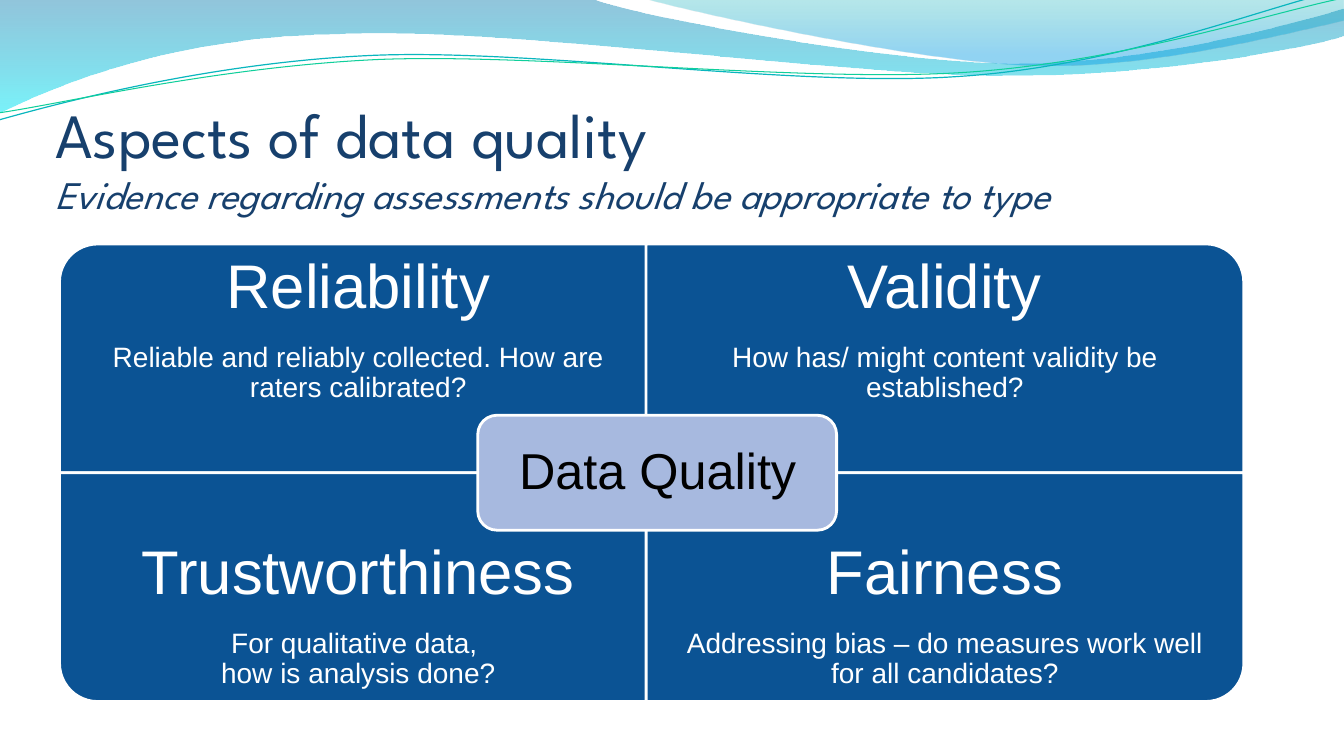
import math
from lxml import etree
from pptx import Presentation, util as u
from pptx.dml.color import RGBColor
from pptx.enum import shapes, text
from pptx.oxml.ns import qn

NAVY = RGBColor(0x17, 0x40, 0x6D)
BLUE = RGBColor(0x0B, 0x53, 0x94)
LILAC = RGBColor(0xA7, 0xB9, 0xDF)
WHITE = RGBColor(0xFF, 0xFF, 0xFF)
BLACK = RGBColor(0, 0, 0)
STEEL = RGBColor(0x00, 0x79, 0xAD)
CYAN = RGBColor(0x00, 0xE9, 0xF7)
TEAL = RGBColor(0x00, 0xAB, 0xB4)
SKY = RGBColor(0x00, 0x99, 0xE4)
AQUA = RGBColor(0x09, 0xB6, 0xBE)
GREEN = RGBColor(0x10, 0xCF, 0x9B)

prs = Presentation()
prs.slide_width, prs.slide_height = u.Inches(40 / 3), u.Inches(7.5)
s = prs.slides.add_slide(prs.slide_layouts[6])


def add_curve(frame, turn, start, segments, close):
    x, y, w, h = frame
    fb = s.shapes.build_freeform(0, 0, scale=1.0)
    fb.add_line_segments([(u.Inches(w), u.Inches(h))], close=close)
    sp = fb.convert_to_shape()
    sp.left, sp.top, sp.width, sp.height = [u.Inches(v) for v in frame]
    sp.rotation = turn
    sp.shadow.inherit = False
    outline = next(sp.element.iter(qn("a:path")))
    for node in list(outline):
        outline.remove(node)
    cos, sin = math.cos(math.radians(-turn)), math.sin(math.radians(-turn))
    for seg in [start] + segments:
        tag = "a:moveTo" if seg is start else "a:lnTo" if len(seg) == 2 else "a:cubicBezTo"
        node = etree.SubElement(outline, qn(tag))
        for px, py in zip(seg[::2], seg[1::2]):
            dx, dy = px - x - w / 2, py - y - h / 2
            pt = etree.SubElement(node, qn("a:pt"))
            pt.set("x", str(int(u.Inches(w / 2 + dx * cos - dy * sin))))
            pt.set("y", str(int(u.Inches(h / 2 + dx * sin + dy * cos))))
    if close:
        etree.SubElement(outline, qn("a:close"))
    return sp


def add_text(box, paras, font, color, inset, anchor, align, spacing):
    sp = s.shapes.add_textbox(*[u.Inches(v) for v in box])
    tf = sp.text_frame
    tf.word_wrap = True
    tf.vertical_anchor = anchor
    tf.margin_left = tf.margin_right = tf.margin_top = tf.margin_bottom = u.Inches(inset)
    for i, (runs, before) in enumerate(paras):
        p = tf.add_paragraph() if i else tf.paragraphs[0]
        p.alignment, p.line_spacing = align, spacing
        p.space_before = u.Pt(before)
        for j, (words, size, italic) in enumerate(runs):
            if j:
                p.add_line_break()
            r = p.add_run()
            r.text = words
            r.font.name, r.font.size = font, u.Pt(size)
            r.font.italic, r.font.color.rgb = italic, color


waves = [
    ((-0.02, -0.01, 13.36, 1.14), (0, 0),
     [(5.87, -0.01), (6.34, 0.17, 8.84, 0.63, 10.11, 0.63),
      (11.37, 0.63, 12.77, 0.26, 13.33, 0.09), (13.34, 0.36),
      (13.11, 0.44, 11.59, 0.76, 9.94, 0.75), (8.29, 0.75, 5.09, 0.28, 3.43, 0.34),
      (1.72, 0.36, 0.61, 0.83, -0.02, 1.13), (0, 0)],
     [(0, STEEL, 43), (1, CYAN, 53)]),
    ((6.38, -0.01, 6.94, 0.7), (6.38, -0.01),
     [(6.79, 0.11, 9.09, 0.62, 10.25, 0.65), (11.4, 0.69, 12.82, 0.32, 13.33, 0.21),
      (13.33, 0), (6.38, -0.01)],
     [(0, TEAL, 28), (0.8, SKY, 43)]),
]
for frame, start, segments, stops in waves:
    sp = add_curve(frame, 0, start, segments, True)
    sp.line.fill.background()
    sp.fill.gradient()
    sp.fill.gradient_angle = 270
    for stop, (pos, color, alpha) in zip(sp.fill.gradient_stops, stops):
        stop.position, stop.color.rgb = pos, color
    for clr, (pos, color, alpha) in zip(sp.element.spPr.iter(qn("a:srgbClr")), stops):
        etree.SubElement(clr, qn("a:alpha")).set("val", str(alpha * 1000))

strands = [
    ((-0.03, 0.22, 13.36, 0.71), (-0.01, 1.19),
     [(0.63, 1.01, 2.1, 0.62, 3.69, 0.55), (5.27, 0.48, 7.89, 0.87, 9.49, 0.76),
      (11.1, 0.66, 12.51, 0.08, 13.3, -0.1)], AQUA, 0.85),
    ((-0.02, 0.3, 13.38, 0.58), (-0.01, 1.12),
     [(0.62, 1.03, 2.18, 0.66, 3.77, 0.59), (5.37, 0.53, 7.96, 0.82, 9.55, 0.72),
      (11.14, 0.62, 12.55, 0.14, 13.33, -0.02)], GREEN, 0.75),
]
for frame, start, segments, color, width in strands:
    sp = add_curve(frame, 357.3, start, segments, False)
    sp.fill.background()
    sp.line.color.rgb, sp.line.width = color, u.Pt(width)

add_text((0.55, 0.98, 12.11, 1.18),
         [([("Aspects of data quality", 45, False),
            ("Evidence regarding assessments should be appropriate to type", 27.9, True)], 0)],
         "League Spartan", NAVY, 0, text.MSO_ANCHOR.BOTTOM, text.PP_ALIGN.LEFT, 1.0)

LEFT, TOP, COL, ROW = 0.59, 2.42, 5.82, 2.27
CELL_W, TEXT_H = 5.93, 0.75 * ROW
quadrants = [
    (0, 0, 270, "Reliability", ["Reliable and reliably collected. How are raters calibrated?"]),
    (1, 0, 0, "Validity", ["How has/ might content validity be established?"]),
    (0, 1, 180, "Trustworthiness", ["For qualitative data, ", "how is analysis done?"]),
    (1, 1, 90, "Fairness", ["Addressing bias – do measures work well for all candidates?"]),
]
centred = (text.MSO_ANCHOR.MIDDLE, text.PP_ALIGN.CENTER, 0.9)
kinds = shapes.MSO_SHAPE
for col, row, turn, heading, lines in quadrants:
    x, y = LEFT + col * COL, TOP + row * ROW
    w, h = (ROW, CELL_W) if turn % 180 else (CELL_W, ROW)
    sp = s.shapes.add_shape(kinds.ROUND_1_RECTANGLE, u.Inches(x + (CELL_W - w) / 2),
                            u.Inches(y + (ROW - h) / 2), u.Inches(w), u.Inches(h))
    sp.rotation = turn
    sp.shadow.inherit = False
    sp.fill.solid()
    sp.fill.fore_color.rgb = BLUE
    sp.line.color.rgb, sp.line.width = WHITE, u.Pt(2)
    add_text((x, y + row * (ROW - TEXT_H), CELL_W, TEXT_H),
             [([(heading, 44, False)], 0), ([(line, 20, False) for line in lines], 15.4)],
             "Arial", WHITE, 0.34, *centred)

hub = (4.74, 4.12, 3.56, 1.14)
sp = s.shapes.add_shape(kinds.ROUNDED_RECTANGLE, *[u.Inches(v) for v in hub])
sp.shadow.inherit = False
sp.fill.solid()
sp.fill.fore_color.rgb = LILAC
sp.line.color.rgb, sp.line.width = WHITE, u.Pt(2)
add_text((4.8, 4.18, 3.45, 1.03), [([("Data Quality", 36, False)], 0)],
         "Arial", BLACK, 0.15, *centred)

prs.save("out.pptx")
